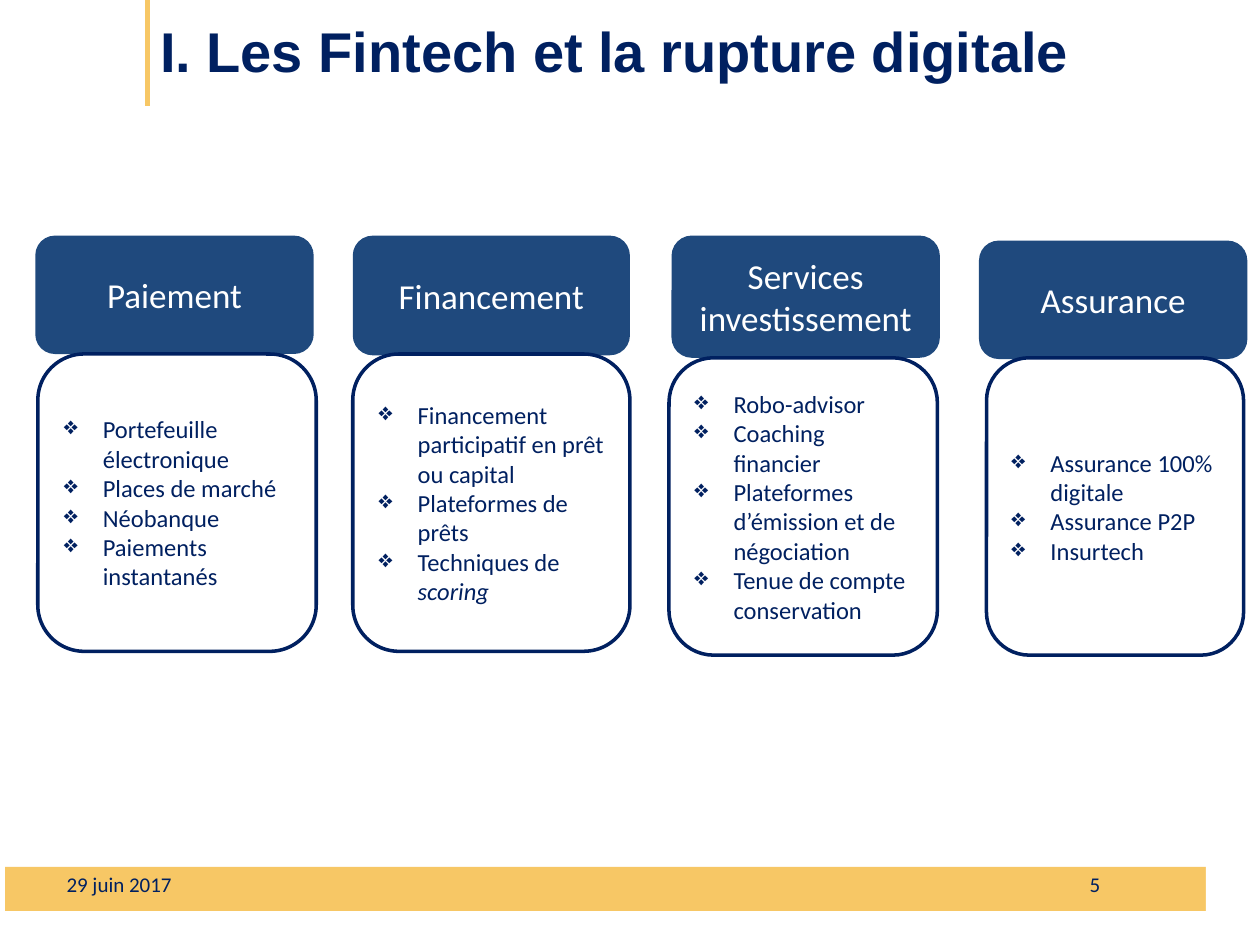
"""Build the slide on Fintech and the digital disruption."""
import pptx
import pptx.dml.color
import pptx.enum.shapes
import pptx.enum.text
import pptx.oxml
import pptx.oxml.ns
import pptx.util
import lxml.etree

Inches = pptx.util.Inches
Pt = pptx.util.Pt
RGBColor = pptx.dml.color.RGBColor
MSO_SHAPE = pptx.enum.shapes.MSO_SHAPE
PP_ALIGN = pptx.enum.text.PP_ALIGN
MIDDLE = pptx.enum.text.MSO_ANCHOR.MIDDLE

NAVY = RGBColor(0x00, 0x20, 0x60)
BLUE = RGBColor(0x1F, 0x49, 0x7D)
GOLD = RGBColor(0xF7, 0xC7, 0x65)
WHITE = RGBColor(0xFF, 0xFF, 0xFF)

COLUMNS = [
    ("Paiement", (0.28, 1.87, 2.21, 0.94), (0.3, 2.81, 2.21, 2.36),
     ["Portefeuille électronique", "Places de marché", "Néobanque",
      "Paiements instantanés"]),
    ("Financement", (2.8, 1.87, 2.2, 0.95), (2.8, 2.81, 2.2, 2.36),
     ["Financement participatif en prêt ou capital", "Plateformes de prêts",
      "Techniques de *scoring"]),
    ("Services investissement", (5.33, 1.87, 2.13, 0.97), (5.31, 2.84, 2.13, 2.36),
     ["Robo-advisor", "Coaching financier",
      "Plateformes d’émission et de négociation",
      "Tenue de compte conservation"]),
    ("Assurance", (7.77, 1.91, 2.13, 0.94), (7.83, 2.84, 2.04, 2.36),
     ["Assurance 100% digitale", "Assurance P2P", "Insurtech"]),
]


def add_box(s, shape, at, fill, line=None):
    sp = s.shapes.add_shape(shape, *map(Inches, at))
    sp.shadow.inherit = False
    sp.fill.solid()
    sp.fill.fore_color.rgb = fill
    if line is None:
        sp.line.fill.background()
    else:
        sp.line.color.rgb = line
        sp.line.width = Pt(2)
    sp.text_frame.word_wrap = True
    sp.text_frame.vertical_anchor = MIDDLE
    return sp


def style(p, size, color, align, name="Calibri", bold=False):
    p.alignment = align
    for r in p.runs:
        r.font.size = Pt(size)
        r.font.name = name
        r.font.bold = bold
        r.font.color.rgb = color


prs = pptx.Presentation()
prs.slide_width = Inches(10)
prs.slide_height = Inches(7.5)
s = prs.slides.add_slide(prs.slide_layouts[5])

title = s.shapes.title
title.left, title.top = Inches(1.17), Inches(-0.03)
title.width, title.height = Inches(8.63), Inches(0.86)
title.text_frame.text = "I. Les Fintech et la rupture digitale"
title.text_frame.vertical_anchor = MIDDLE
style(title.text_frame.paragraphs[0], 32, NAVY, PP_ALIGN.LEFT, "Arial", True)

add_box(s, MSO_SHAPE.RECTANGLE, (0.04, 6.88, 9.76, 0.35), GOLD)
add_box(s, MSO_SHAPE.RECTANGLE, (9.57, 6.74, 0.28, 0.66), WHITE)
rule = s.shapes.add_connector(
    pptx.enum.shapes.MSO_CONNECTOR.STRAIGHT,
    Inches(1.17), Inches(0), Inches(1.17), Inches(0.84))
rule.line.color.rgb = GOLD
rule.line.width = Pt(2.75)
lxml.etree.SubElement(rule._element.spPr, pptx.oxml.ns.qn("a:effectLst"))

for text, left, align in [("29 juin 2017", 0.43, PP_ALIGN.LEFT),
                          ("5", 6.5, PP_ALIGN.RIGHT)]:
    footer = s.shapes.add_textbox(Inches(left), Inches(6.82), Inches(2.33), Inches(0.4))
    tf = footer.text_frame
    tf.word_wrap = True
    tf.vertical_anchor = MIDDLE
    tf.text = text
    style(tf.paragraphs[0], 12, NAVY, align)

for heading, head_at, list_at, items in COLUMNS:
    head = add_box(s, MSO_SHAPE.ROUNDED_RECTANGLE, head_at, BLUE)
    head.text_frame.text = heading
    style(head.text_frame.paragraphs[0], 20, WHITE, PP_ALIGN.CENTER)

    tf = add_box(s, MSO_SHAPE.ROUNDED_RECTANGLE, list_at, WHITE, NAVY).text_frame
    for i, item in enumerate(items):
        p = tf.paragraphs[0] if i == 0 else tf.add_paragraph()
        plain, _, italic = item.partition("*")
        p.text = plain
        if italic:
            r = p.add_run()
            r.text = italic
            r.font.italic = True
        pPr = p._p.get_or_add_pPr()
        pPr.set("marL", str(Inches(0.31)))
        pPr.set("indent", str(-Inches(0.31)))
        bullet = lxml.etree.SubElement(pPr, pptx.oxml.ns.qn("a:buChar"))
        bullet.set("char", "❖")
        style(p, 14, NAVY, PP_ALIGN.LEFT)

prs.save("out.pptx")
